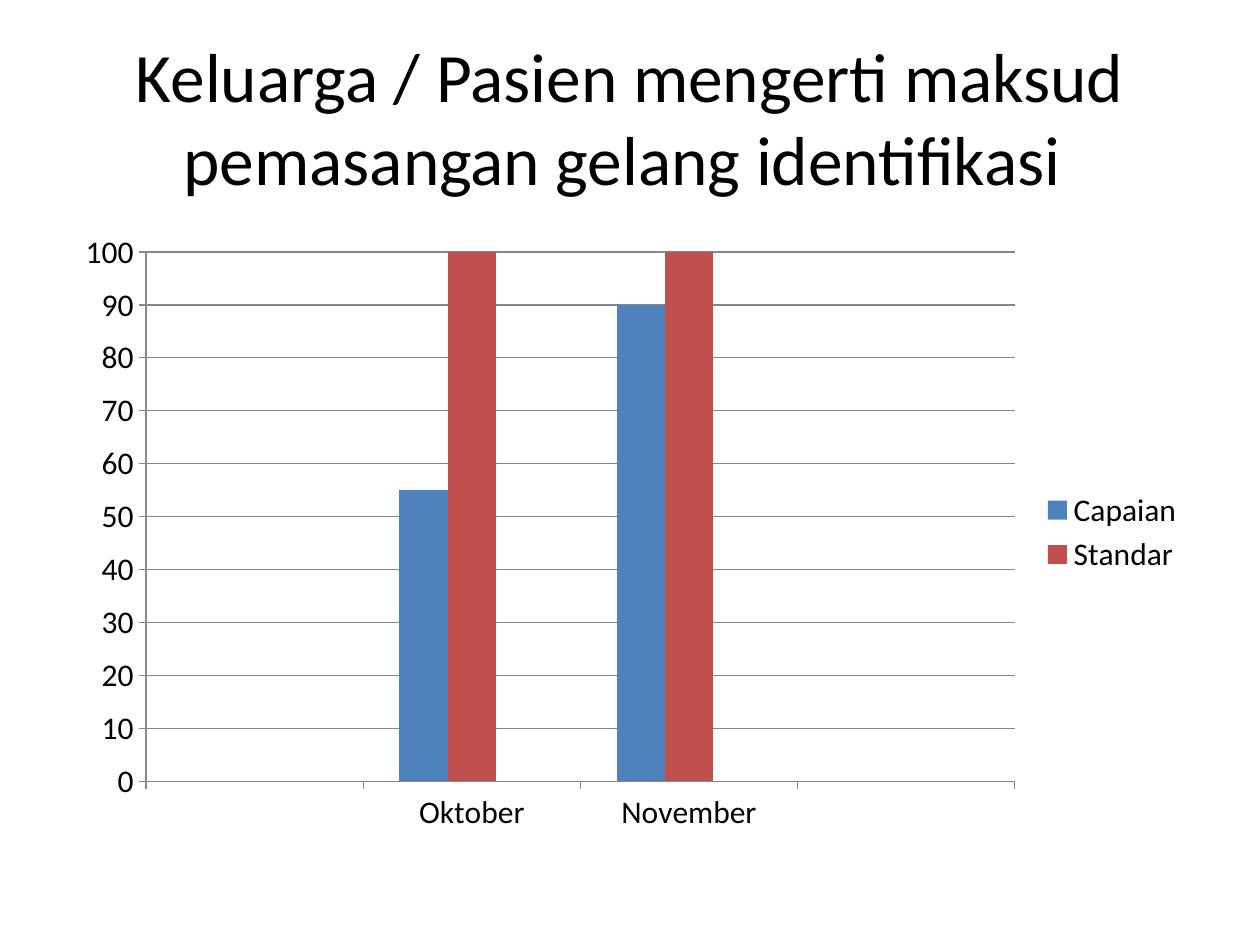
from lxml import etree
from pptx import Presentation
from pptx import util as u
from pptx.chart.data import CategoryChartData
from pptx.dml.color import RGBColor
from pptx.enum import chart as ch, text
from pptx.oxml.ns import qn

C = {"text": "000000", "axis": "878787",
     "Capaian": "4F81BD", "Standar": "C0504D", "Series 3": "9BBB59"}
FONT = "Calibri"

prs = Presentation()
prs.slide_width, prs.slide_height = u.Inches(10), u.Inches(7.5)
W, H = prs.slide_width, prs.slide_height
s = prs.slides.add_slide(prs.slide_layouts[6])
left, width = int(W * 0.05), int(W * 0.9)


def style(font, size):
    font.name, font.size = FONT, u.Pt(size)
    font.color.rgb = RGBColor.from_string(C["text"])


title = s.shapes.add_textbox(left, int(H * 0.04), width, int(H / 6))
tf = title.text_frame
tf.word_wrap = True
tf.vertical_anchor = text.MSO_ANCHOR.MIDDLE
p = tf.paragraphs[0]
p.text = "Keluarga / Pasien mengerti maksud pemasangan gelang identifikasi "
p.alignment = text.PP_ALIGN.CENTER
style(p.runs[0].font, 39.6)

data = CategoryChartData()
data.categories = ["", "Oktober", "November", ""]
data.add_series("Capaian", [None, 55, 90, None])
data.add_series("Standar", [None, 100, 100, None])
data.add_series("Series 3", [None] * 4)
chart = s.shapes.add_chart(ch.XL_CHART_TYPE.COLUMN_CLUSTERED, left,
                           int(H * 7 / 30), width, int(H * 0.66), data).chart
chart.has_title = False
style(chart.font, 18)

plot = chart.plots[0]
plot.gap_width, plot.overlap = 150, 0
plot.vary_by_categories = False
for series in plot.series:
    series.format.fill.solid()
    series.format.fill.fore_color.rgb = RGBColor.from_string(C[series.name])

val, cat = chart.value_axis, chart.category_axis
val.minimum_scale, val.maximum_scale, val.major_unit = 0, 100, 10
val.has_major_gridlines = True
for axis in (val, cat):
    axis.major_tick_mark = ch.XL_TICK_MARK.OUTSIDE
for part in (val, cat, val.major_gridlines):
    part.format.line.color.rgb = RGBColor.from_string(C["axis"])
    part.format.line.width = u.Pt(0.75)

chart.has_legend = True
legend = chart.legend
legend.position = ch.XL_LEGEND_POSITION.RIGHT
legend.include_in_layout = False
entry = etree.Element(qn("c:legendEntry"))
etree.SubElement(entry, qn("c:idx")).set("val", "2")
etree.SubElement(entry, qn("c:delete")).set("val", "1")
legend._element.find(qn("c:legendPos")).addnext(entry)

prs.save("out.pptx")
